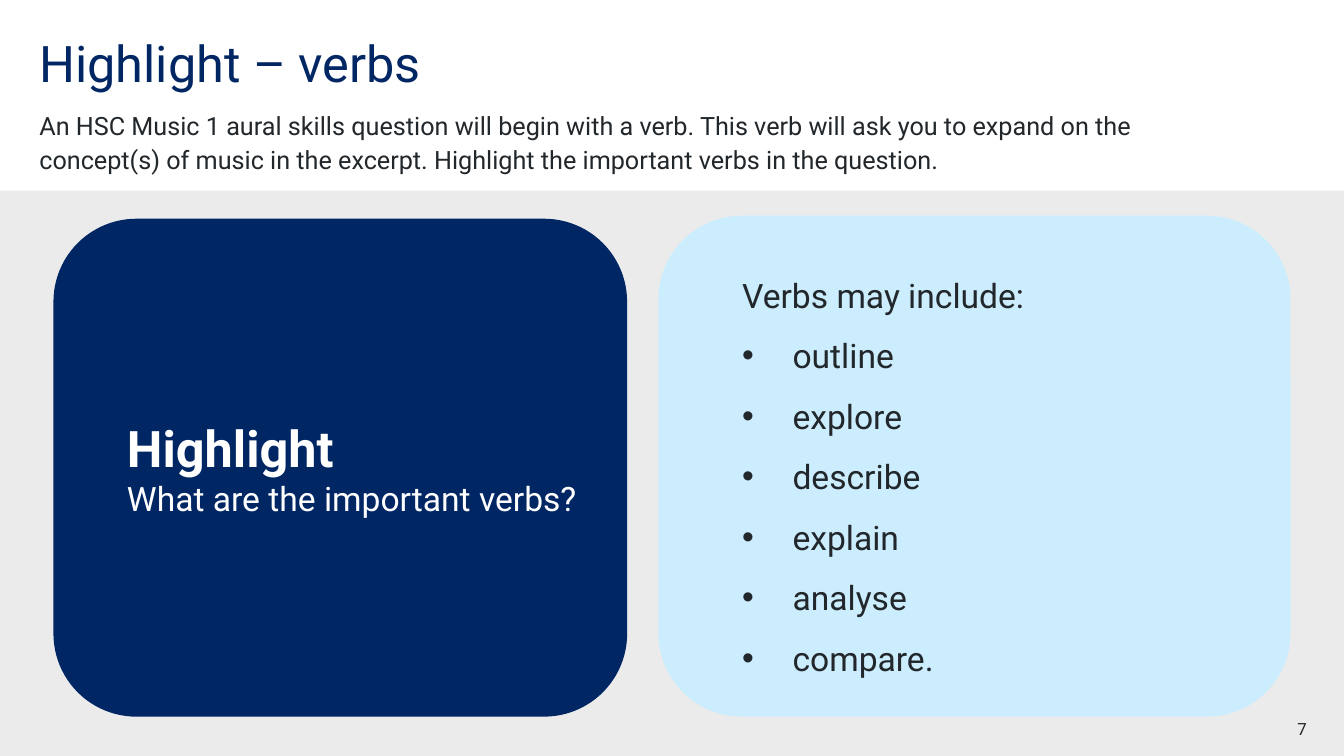
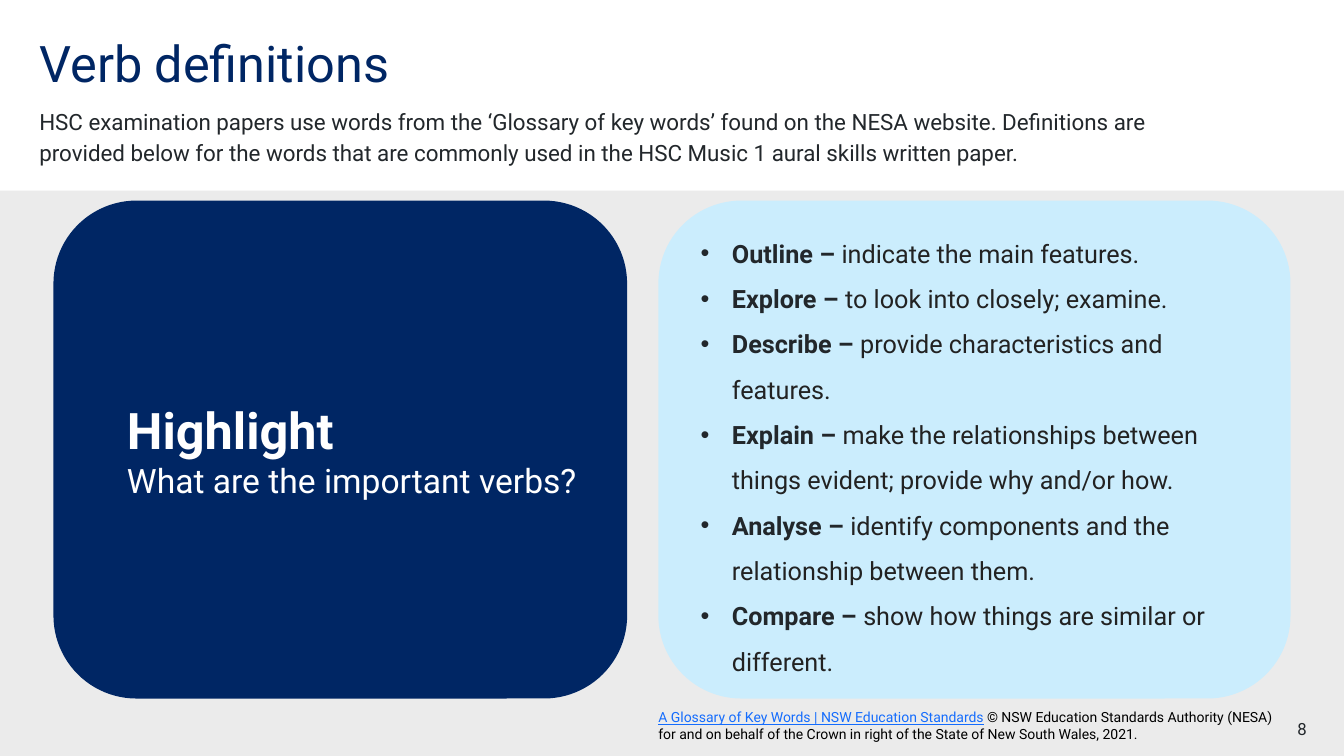
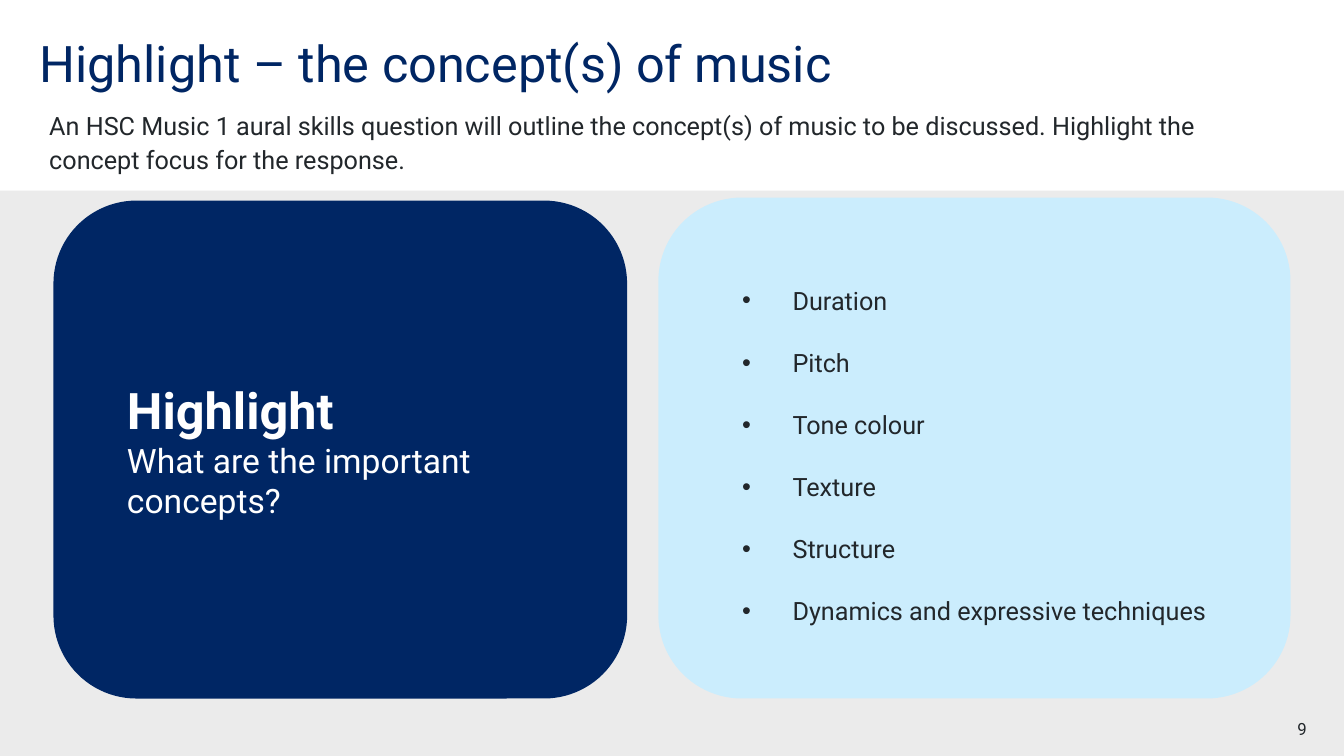
from lxml import etree
from pptx import Presentation
from pptx.dml.color import RGBColor
from pptx.enum.shapes import MSO_SHAPE as SHAPE
from pptx.enum.text import MSO_ANCHOR as ANCHOR, PP_ALIGN as ALIGN
from pptx.oxml.ns import qn
from pptx.util import Inches, Pt

FONT = "Roboto"
COLORS = {
    "navy": "002664",
    "sky": "CBEDFD",
    "grey": "EBEBEB",
    "ink": "22272B",
    "definition": "222222",
    "white": "FFFFFF",
    "link": "146CFD",
    "black": "000000",
}
CARD_BOTTOM = 6.93


def rgb(name):
    return RGBColor.from_string(COLORS[name])


def add_run(p, text, size, color="ink", bold=False, underline=False):
    r = p.add_run()
    r.text = text
    r.font.name = FONT
    r.font.size = Pt(size)
    r.font.color.rgb = rgb(color)
    r.font.bold = bold
    r.font.underline = underline


def add_paragraph(tf, line=None, after=0, margin=0, indent=0, bullet=False):
    first = tf.paragraphs[0]
    p = tf.add_paragraph() if first.runs else first
    p.alignment = ALIGN.LEFT
    p.space_before = Pt(0)
    p.space_after = Pt(after)
    if line:
        p.line_spacing = line
    pPr = p._p.get_or_add_pPr()
    pPr.set("marL", str(Inches(margin)))
    pPr.set("indent", str(Inches(indent)))
    if bullet:
        etree.SubElement(pPr, qn("a:buFont")).set("typeface", "Arial")
        etree.SubElement(pPr, qn("a:buChar")).set("char", "•")
    return p


def add_text(s, left, top, width, height, line=None, inset=(0, 0)):
    tf = s.shapes.add_textbox(
        Inches(left), Inches(top), Inches(width), Inches(height)
    ).text_frame
    tf.word_wrap = True
    tf.margin_left = tf.margin_right = Inches(inset[0])
    tf.margin_top = tf.margin_bottom = Inches(inset[1])
    return add_paragraph(tf, line)


def add_panel(s, kind, left, top, width, height, color):
    sp = s.shapes.add_shape(
        kind, Inches(left), Inches(top), Inches(width), Inches(height)
    )
    sp.shadow.inherit = False
    sp.fill.solid()
    sp.fill.fore_color.rgb = rgb(color)
    sp.line.fill.background()
    tf = sp.text_frame
    tf.word_wrap = True
    tf.vertical_anchor = ANCHOR.MIDDLE
    return tf


def add_page(prs, number, title):
    s = prs.slides.add_slide(prs.slide_layouts[6])
    add_panel(s, SHAPE.RECTANGLE, 0, 1.89, 13.33, 5.61, "grey")
    add_run(add_text(s, 0.39, 0.39, 11.02, 0.6, 0.9), title, 36, "navy")
    p = add_text(s, 12.17, 7.13, 0.79, 0.2)
    p.alignment = ALIGN.RIGHT
    add_run(p, str(number), 12)
    return s


def add_intro(s, text, size, top, width, height, inset=(0, 0)):
    add_run(add_text(s, 0.39, top, width, height, 1.14, inset), text, size)


def add_prompt_card(s, question, bottom=CARD_BOTTOM):
    tf = add_panel(
        s, SHAPE.ROUNDED_RECTANGLE, 0.53, bottom - 4.94, 5.69, 4.94, "navy"
    )
    add_run(add_paragraph(tf, margin=0.39), "Highlight", 36, "white", True)
    add_run(add_paragraph(tf, margin=0.39), question, 24, "white")


def add_answer_card(s, height, bottom=CARD_BOTTOM):
    return add_panel(
        s, SHAPE.ROUNDED_RECTANGLE, 6.53, bottom - height, 6.27, height, "sky"
    )


def add_list(tf, items, size, after=0):
    for item in items:
        p = add_paragraph(tf, 1.5, after, 0.99, -0.5, bullet=True)
        add_run(p, item, size)


def add_definitions(tf, definitions):
    for verb, meaning in definitions:
        p = add_paragraph(tf, 1.5, 0, 0.39, -0.31, bullet=True)
        add_run(p, f"{verb} – ", 18, bold=True)
        add_run(p, meaning, 18, "definition")


def build_verbs(prs):
    s = add_page(prs, 7, "Highlight – verbs")
    add_intro(
        s,
        "An HSC Music 1 aural skills question will begin with a verb. "
        "This verb will ask you to expand on the concept(s) of music in the "
        "excerpt. Highlight the important verbs in the question.",
        18, 1.05, 11.39, 0.66,
    )
    add_prompt_card(s, "What are the important verbs?", 7.11)
    tf = add_answer_card(s, 4.97, 7.11)
    p = add_paragraph(tf, 1.5, 0, 0.99, -0.5)
    add_run(p, "Verbs may include:", 24)
    verbs = ["outline", "explore", "describe", "explain", "analyse", "compare."]
    add_list(tf, verbs, 24)


def build_definitions(prs):
    s = add_page(prs, 8, "Verb definitions")
    add_intro(
        s,
        "HSC examination papers use words from the ‘Glossary of key words’ "
        "found on the NESA website. Definitions are provided below for the "
        "words that are commonly used in the HSC Music 1 aural skills written "
        "paper.",
        16, 1.04, 11.77, 0.59,
    )
    add_prompt_card(s, "What are the important verbs?")
    add_definitions(add_answer_card(s, 4.94), [
        ("Outline", "indicate the main features."),
        ("Explore", "to look into closely; examine."),
        ("Describe", "provide characteristics and features."),
        ("Explain", "make the relationships between things evident; "
                    "provide why and/or how."),
        ("Analyse", "identify components and the relationship between them."),
        ("Compare", "show how things are similar or different."),
    ])
    p = add_text(s, 6.53, 7.03, 6.13, 0.34)
    add_run(p, "A Glossary of Key Words | NSW Education Standards", 10, "link",
            underline=True)
    add_run(p, " © NSW Education Standards Authority (NESA) for and on behalf "
               "of the Crown in right of the State of New South Wales, 2021.",
            10, "black")


def build_concepts(prs):
    s = add_page(prs, 9, "Highlight – the concept(s) of music")
    add_intro(
        s,
        "An HSC Music 1 aural skills question will outline the concept(s) of "
        "music to be discussed. Highlight the concept focus for the response.",
        18, 1, 11.57, 0.76, (0.1, 0.05),
    )
    add_prompt_card(s, "What are the important concepts?")
    concepts = ["Duration", "Pitch", "Tone colour", "Texture", "Structure",
                "Dynamics and expressive techniques"]
    add_list(add_answer_card(s, 4.97), concepts, 18, after=12)


def main():
    prs = Presentation()
    prs.slide_width = Inches(13.33)
    prs.slide_height = Inches(7.5)
    build_verbs(prs)
    build_definitions(prs)
    build_concepts(prs)
    prs.save("out.pptx")


if __name__ == "__main__":
    main()
